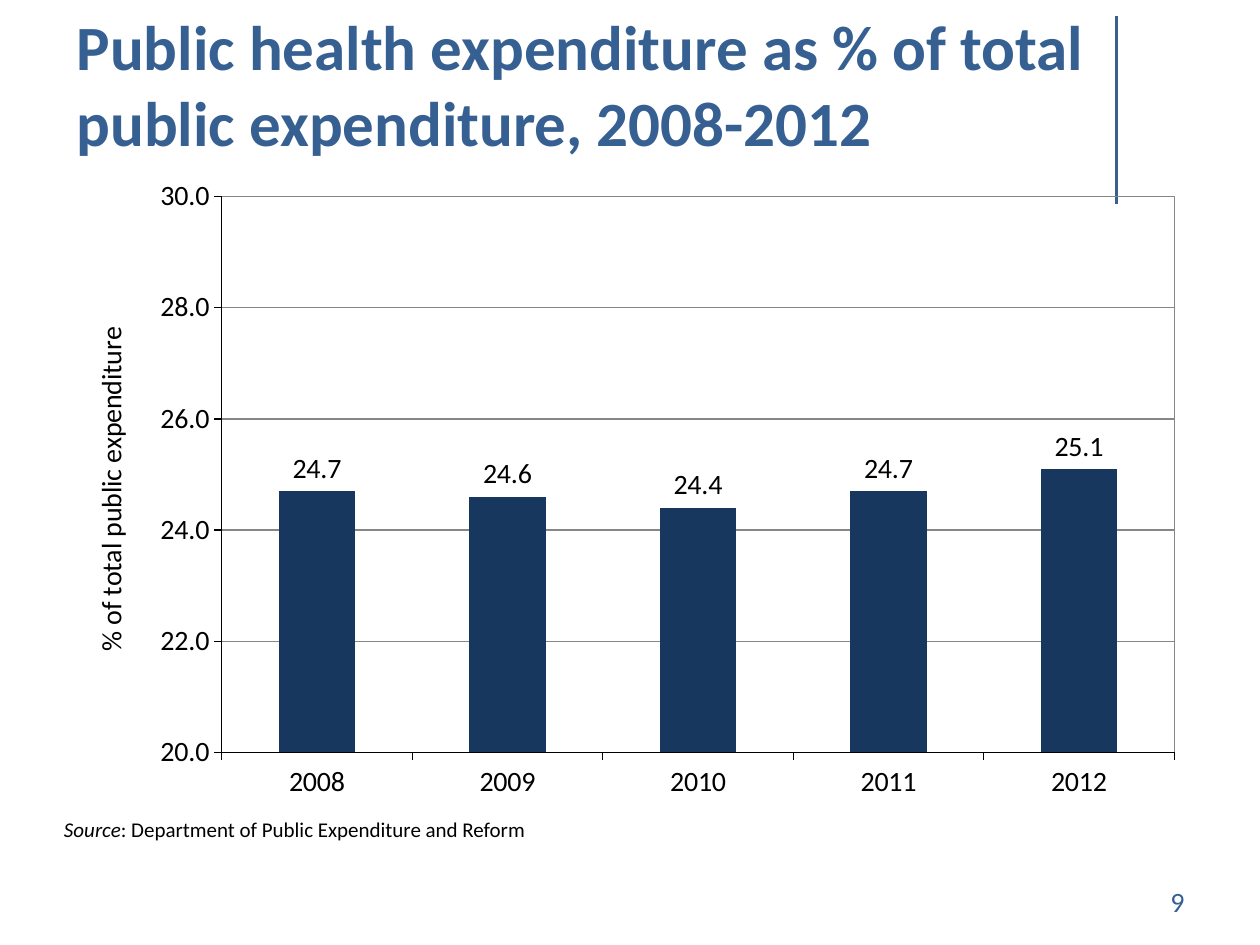
from typing import NamedTuple

from lxml.etree import SubElement
from pptx import Presentation
from pptx.chart.chart import Chart
from pptx.chart.data import CategoryChartData
from pptx.dml.color import RGBColor
from pptx.enum.chart import XL_CHART_TYPE, XL_LABEL_POSITION, XL_TICK_MARK
from pptx.enum.shapes import MSO_CONNECTOR
from pptx.enum.text import MSO_ANCHOR, PP_ALIGN
from pptx.oxml import parse_xml
from pptx.oxml.ns import nsdecls, qn
from pptx.slide import Slide
from pptx.util import Inches, Pt

FONT = "Calibri"
BLUE = RGBColor(0x37, 0x60, 0x92)
NAVY = RGBColor(0x17, 0x37, 0x5E)
BLACK = RGBColor(0, 0, 0)
GRAY = RGBColor(0x86, 0x86, 0x86)
EXPENDITURE_SHARES = {"2008": 24.7, "2009": 24.6, "2010": 24.4, "2011": 24.7, "2012": 25.1}


class Run(NamedTuple):
    text: str
    italic: bool = False


class Label(NamedTuple):
    left: float
    top: float
    width: float
    height: float
    runs: tuple[Run, ...]
    size: int
    color: RGBColor
    bold: bool = False
    alignment: PP_ALIGN = PP_ALIGN.LEFT
    anchor: MSO_ANCHOR = MSO_ANCHOR.TOP
    wrap: bool = True


LABELS = (
    Label(0.51, 0.57, 8.99, 0.74,
          (Run("Public health expenditure as % of total public expenditure, 2008-2012"),),
          36, BLUE, bold=True, anchor=MSO_ANCHOR.BOTTOM),
    Label(7.17, 6.95, 2.33, 0.4, (Run("9"),), 16, BLUE,
          alignment=PP_ALIGN.RIGHT, anchor=MSO_ANCHOR.MIDDLE),
    Label(0.41, 6.43, 3.9, 0.3,
          (Run("Source", italic=True), Run(": Department of Public Expenditure and Reform")),
          12, BLACK, wrap=False),
)


def add_label(slide: Slide, label: Label) -> None:
    shape = slide.shapes.add_textbox(
        Inches(label.left), Inches(label.top), Inches(label.width), Inches(label.height))
    frame = shape.text_frame
    frame.word_wrap = label.wrap
    frame.vertical_anchor = label.anchor
    paragraph = frame.paragraphs[0]
    paragraph.alignment = label.alignment
    font = paragraph.font
    font.name, font.size, font.bold = FONT, Pt(label.size), label.bold
    font.color.rgb = label.color
    for content in label.runs:
        run = paragraph.add_run()
        run.text = content.text
        if content.italic:
            run.font.italic = True


def add_title_rule(slide: Slide) -> None:
    rule = slide.shapes.add_connector(
        MSO_CONNECTOR.STRAIGHT, Inches(8.86), Inches(0.13), Inches(8.86), Inches(1.62))
    rule.line.color.rgb = BLUE
    rule.line.width = Pt(1.5)
    SubElement(rule.element.spPr, qn("a:effectLst"))


def frame_plot_area(chart: Chart) -> None:
    plot_area = chart.element.find(".//" + qn("c:plotArea"))
    for layout in plot_area.findall(qn("c:layout")):
        plot_area.remove(layout)
    position = {"x": 0.14, "y": 0.045, "w": 0.84, "h": 0.86}
    modes = "".join(f'<c:{key}Mode val="edge"/>' for key in "xy")
    values = "".join(f'<c:{key} val="{value}"/>' for key, value in position.items())
    plot_area.insert(0, parse_xml(
        f'<c:layout {nsdecls("c")}><c:manualLayout><c:layoutTarget val="inner"/>'
        f'{modes}{values}</c:manualLayout></c:layout>'))
    plot_area.append(parse_xml(
        f'<c:spPr {nsdecls("c", "a")}><a:noFill/><a:ln w="{Pt(0.75)}"><a:solidFill>'
        f'<a:srgbClr val="{GRAY}"/></a:solidFill></a:ln></c:spPr>'))


def add_expenditure_chart(slide: Slide) -> None:
    data = CategoryChartData(number_format="#,##0.0")
    data.categories = list(EXPENDITURE_SHARES)
    data.add_series("Series 1", list(EXPENDITURE_SHARES.values()))
    chart = slide.shapes.add_chart(
        XL_CHART_TYPE.COLUMN_CLUSTERED,
        Inches(0.5), Inches(1.33), Inches(9), Inches(5.13), data).chart
    chart.has_title = False
    chart.has_legend = False
    chart.font.name, chart.font.size = FONT, Pt(16)
    chart.font.color.rgb = BLACK

    for axis in (chart.category_axis, chart.value_axis):
        axis.major_tick_mark = XL_TICK_MARK.OUTSIDE
        axis.minor_tick_mark = XL_TICK_MARK.NONE
        axis.format.line.color.rgb = BLACK
        axis.format.line.width = Pt(0.75)

    value_axis = chart.value_axis
    value_axis.minimum_scale, value_axis.maximum_scale = 20, 30
    value_axis.major_unit = 2
    value_axis.tick_labels.number_format = "#,##0.0"
    value_axis.tick_labels.number_format_is_linked = False
    value_axis.has_major_gridlines = True
    value_axis.major_gridlines.format.line.color.rgb = GRAY
    value_axis.major_gridlines.format.line.width = Pt(0.75)
    title_frame = value_axis.axis_title.text_frame
    title_frame.text = "% of total public expenditure"
    title_font = title_frame.paragraphs[0].font
    title_font.name, title_font.size, title_font.bold = FONT, Pt(16), False
    title_font.color.rgb = BLACK

    plot = chart.plots[0]
    plot.gap_width = 150
    plot.vary_by_categories = False
    series = plot.series[0]
    series.format.fill.solid()
    series.format.fill.fore_color.rgb = NAVY
    labels = series.data_labels
    labels.show_value = True
    labels.position = XL_LABEL_POSITION.OUTSIDE_END
    labels.number_format = "#,##0.0"
    labels.number_format_is_linked = False
    frame_plot_area(chart)


def main() -> None:
    presentation = Presentation()
    presentation.slide_width, presentation.slide_height = Inches(10), Inches(7.5)
    slide = presentation.slides.add_slide(presentation.slide_layouts[6])
    add_title_rule(slide)
    add_expenditure_chart(slide)
    for label in LABELS:
        add_label(slide, label)
    presentation.save("out.pptx")


if __name__ == "__main__":
    main()
